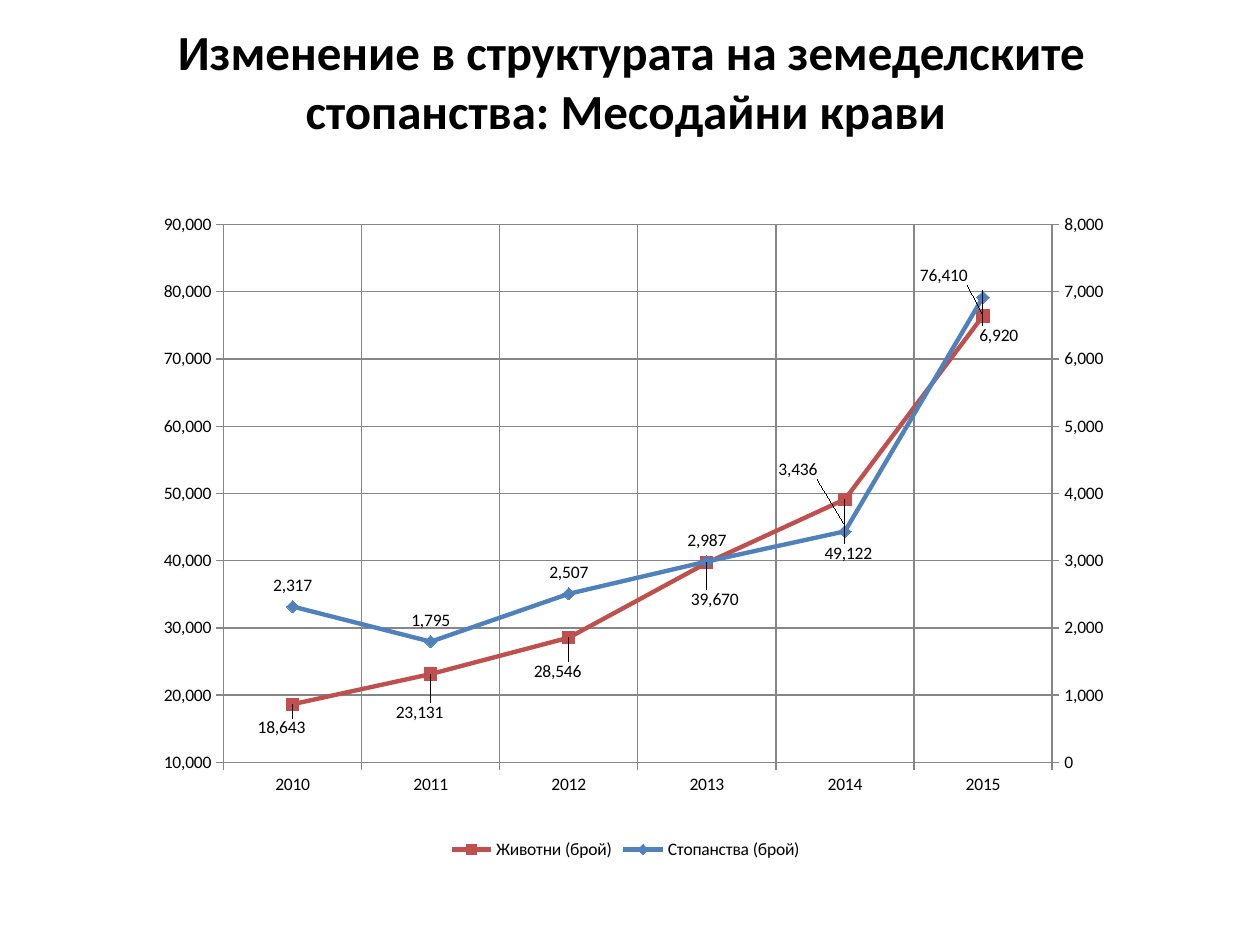
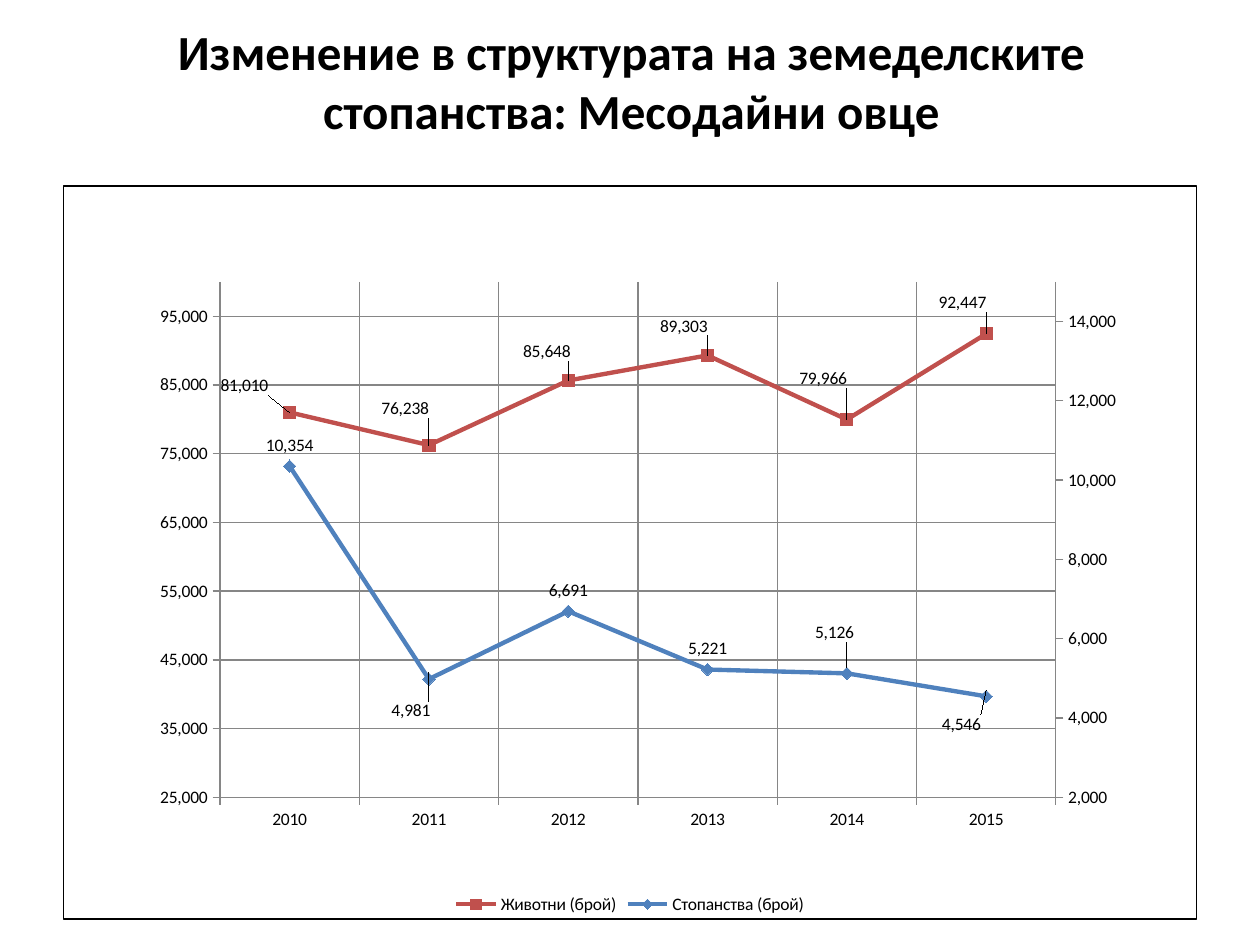
from copy import deepcopy
from dataclasses import dataclass

from lxml import etree
from pptx import Presentation
from pptx import util as u
from pptx.chart.axis import ValueAxis
from pptx.chart.data import CategoryChartData
from pptx.dml.color import RGBColor
from pptx.enum import chart as ch, text
from pptx.oxml import parse_xml
from pptx.oxml.ns import nsdecls, qn


@dataclass(frozen=True)
class Theme:
    font: str = "Calibri"
    ink: str = "000000"
    grid: str = "868686"
    animals: str = "C0504D"
    farms: str = "4F81BD"
    title_size: int = 28
    chart_size: int = 10
    series_width: float = 2.5
    line_width: float = 0.75


THEME = Theme()
WIDTH, HEIGHT = 10, 7.5
TITLE_BOX = (0.51, 0.36, 9, 0.55)
TITLE = "Изменение в структурата на земеделските стопанства: "
YEARS = ["2010", "2011", "2012", "2013", "2014", "2015"]
NUMBER_FORMAT = "#,##0"

# Axis scales are (minimum, maximum, step); label shifts are shares of the chart
# measured from the label's usual place, by point number.
COWS = dict(
    topic="Месодайни крави ", box=(0.51, 1.47, 8.91, 5.39),
    plot_box=(0.142, 0.058, 0.738, 0.792), framed=False,
    animals=[18643, 23131, 28546, 39670, 49122, 76410],
    farms=[2317, 1795, 2507, 2987, 3436, 6920],
    left_scale=(10000, 90000, 10000), right_scale=(0, 8000, 1000),
    animal_shifts={0: (-0.01, 0.035), 1: (-0.01, 0.056), 2: (-0.01, 0.05),
                   3: (0.007, 0.054), 4: (0.003, 0.08), 5: (-0.035, -0.06)},
    farm_shifts={4: (-0.042, -0.06), 5: (0.014, 0.087)},
)
SHEEP = dict(
    topic="Месодайни овце", box=(0.5, 1.47, 9, 5.83),
    plot_box=(0.138, 0.131, 0.738, 0.703), framed=True,
    animals=[81010, 76238, 85648, 89303, 79966, 92447],
    farms=[10354, 4981, 6691, 5221, 5126, 4546],
    left_scale=(25000, 100000, 10000), right_scale=(2000, 15000, 2000),
    animal_shifts={0: (-0.04, -0.037), 1: (-0.021, -0.05), 2: (-0.019, -0.04),
                   3: (-0.021, -0.04), 4: (-0.021, -0.056), 5: (-0.021, -0.042)},
    farm_shifts={1: (-0.016, 0.072), 4: (-0.011, -0.027), 5: (-0.022, 0.067)},
)


def rgb(colour):
    return RGBColor.from_string(colour)


def inches(box):
    return [u.Inches(length) for length in box]


def set_font(font, size, bold=False):
    font.name, font.size, font.bold = THEME.font, u.Pt(size), bold
    font.color.rgb = rgb(THEME.ink)


def set_line(line, colour, width):
    line.color.rgb = rgb(colour)
    line.width = u.Pt(width)


def manual_layout(**settings):
    """Return a c:layout element holding the given settings in order."""
    layout = parse_xml(f"<c:layout {nsdecls('c')}><c:manualLayout/></c:layout>")
    for tag, value in settings.items():
        etree.SubElement(layout[0], qn(f"c:{tag}")).set("val", str(value))
    return layout


def add_title(slide, box, words):
    frame = slide.shapes.add_textbox(*inches(box)).text_frame
    frame.word_wrap = True
    frame.vertical_anchor = text.MSO_ANCHOR.MIDDLE
    heading = frame.paragraphs[0]
    heading.text = words
    heading.alignment = text.PP_ALIGN.CENTER
    set_font(heading.font, THEME.title_size, bold=True)


def style_axis(axis, gridlines):
    axis.major_tick_mark = ch.XL_TICK_MARK.OUTSIDE
    axis.minor_tick_mark = ch.XL_TICK_MARK.NONE
    set_line(axis.format.line, THEME.grid, THEME.line_width)
    axis.has_major_gridlines = gridlines
    if gridlines:
        set_line(axis.major_gridlines.format.line, THEME.grid, THEME.line_width)


def style_value_axis(axis, scale, gridlines):
    style_axis(axis, gridlines)
    axis.minimum_scale, axis.maximum_scale, axis.major_unit = scale
    axis.tick_labels.number_format = NUMBER_FORMAT
    axis.tick_labels.number_format_is_linked = False


def style_series(series, colour, marker, label_position, shifts):
    series.smooth = False
    set_line(series.format.line, colour, THEME.series_width)
    series.marker.style, series.marker.size = marker, 7
    series.marker.format.fill.solid()
    series.marker.format.fill.fore_color.rgb = rgb(colour)
    set_line(series.marker.format.line, colour, THEME.line_width)
    series.data_labels.show_value = True
    series.data_labels.position = label_position
    for index, (x, y) in shifts.items():
        series.points[index].data_label.position = label_position
    # Move the single labels away from the lines
    for label in series.data_labels._element.findall(qn("c:dLbl")):
        index = label.find(qn("c:idx"))
        x, y = shifts[int(index.get("val"))]
        index.addnext(manual_layout(x=x, y=y))


def move_to_right_axis(chart, series):
    """Give the series its own line plot and a value axis on the right."""
    left_plot = series._element.getparent()
    right_plot = deepcopy(left_plot)
    for copied in right_plot.findall(qn("c:ser")):
        right_plot.remove(copied)
    right_plot.find(qn("c:varyColors")).addnext(series._element)
    left_plot.addnext(right_plot)

    left = chart.value_axis._element
    category, value = deepcopy(chart.category_axis._element), deepcopy(left)
    left.addnext(value)
    value.addnext(category)
    ids = {category: "50010", value: "50020"}
    for axis, partner in ((category, value), (value, category)):
        axis.find(qn("c:axId")).set("val", ids[axis])
        axis.find(qn("c:crossAx")).set("val", ids[partner])
    for reference, number in zip(right_plot.findall(qn("c:axId")), ids.values()):
        reference.set("val", number)
    category.find(qn("c:delete")).set("val", "1")
    value.find(qn("c:axPos")).set("val", "r")
    value.find(qn("c:crosses")).set("val", "max")
    return ValueAxis(value)


def add_structure_chart(slide, data):
    figures = CategoryChartData(number_format=NUMBER_FORMAT)
    figures.categories = YEARS
    figures.add_series("Животни (брой)", data["animals"])
    figures.add_series("Стопанства (брой)", data["farms"])
    chart = slide.shapes.add_chart(
        ch.XL_CHART_TYPE.LINE_MARKERS, *inches(data["box"]), figures).chart
    chart.has_title = False
    set_font(chart.font, THEME.chart_size)
    chart.has_legend = True
    chart.legend.position = ch.XL_LEGEND_POSITION.BOTTOM
    chart.legend.include_in_layout = False
    chart.plots[0].vary_by_categories = False

    # Series and axes
    animals, farms = chart.plots[0].series
    style_series(animals, THEME.animals, ch.XL_MARKER_STYLE.SQUARE,
                 ch.XL_LABEL_POSITION.CENTER, data["animal_shifts"])
    style_series(farms, THEME.farms, ch.XL_MARKER_STYLE.DIAMOND,
                 ch.XL_LABEL_POSITION.ABOVE, data["farm_shifts"])
    style_axis(chart.category_axis, gridlines=True)
    style_value_axis(chart.value_axis, data["left_scale"], gridlines=True)
    right_axis = move_to_right_axis(chart, farms)
    style_value_axis(right_axis, data["right_scale"], gridlines=False)

    # Plot area and frame
    plot_area = chart._chartSpace.chart.plotArea
    for layout in plot_area.findall(qn("c:layout")):
        plot_area.remove(layout)
    x, y, w, h = data["plot_box"]
    plot_area.insert(0, manual_layout(layoutTarget="inner", xMode="edge",
                                      yMode="edge", x=x, y=y, w=w, h=h))
    outline = (f'<a:solidFill><a:srgbClr val="{THEME.ink}"/></a:solidFill>'
               if data["framed"] else "<a:noFill/>")
    chart._chartSpace.chart.addnext(parse_xml(
        f"<c:spPr {nsdecls('c', 'a')}><a:noFill/>"
        f'<a:ln w="{u.Pt(THEME.line_width)}">{outline}</a:ln></c:spPr>'))


def add_chart_slide(deck, data):
    slide = deck.slides.add_slide(deck.slide_layouts[6])
    add_title(slide, TITLE_BOX, TITLE + data["topic"])
    add_structure_chart(slide, data)


def main():
    deck = Presentation()
    deck.slide_width, deck.slide_height = inches((WIDTH, HEIGHT))
    for data in (COWS, SHEEP):
        add_chart_slide(deck, data)
    deck.save("out.pptx")


if __name__ == "__main__":
    main()
